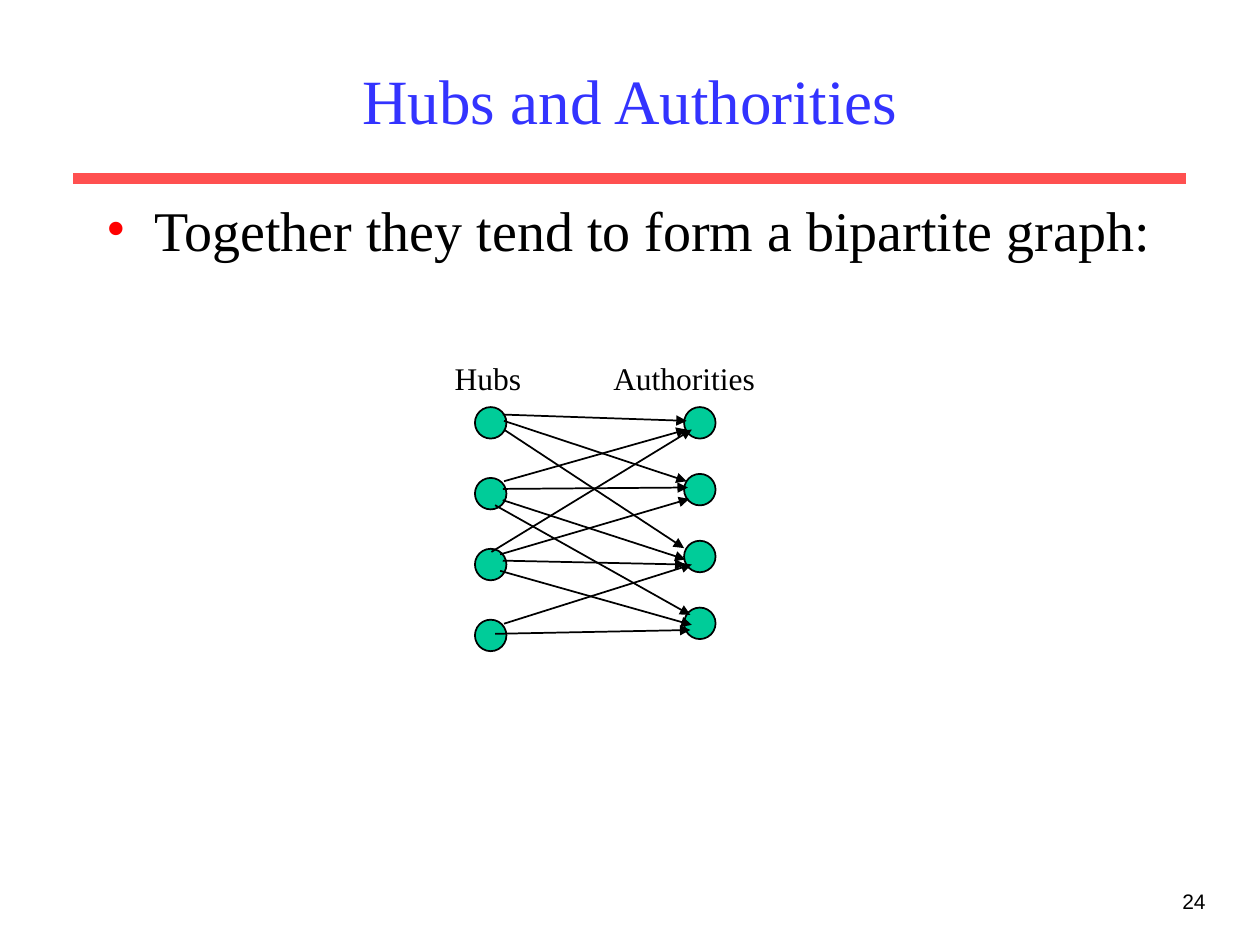
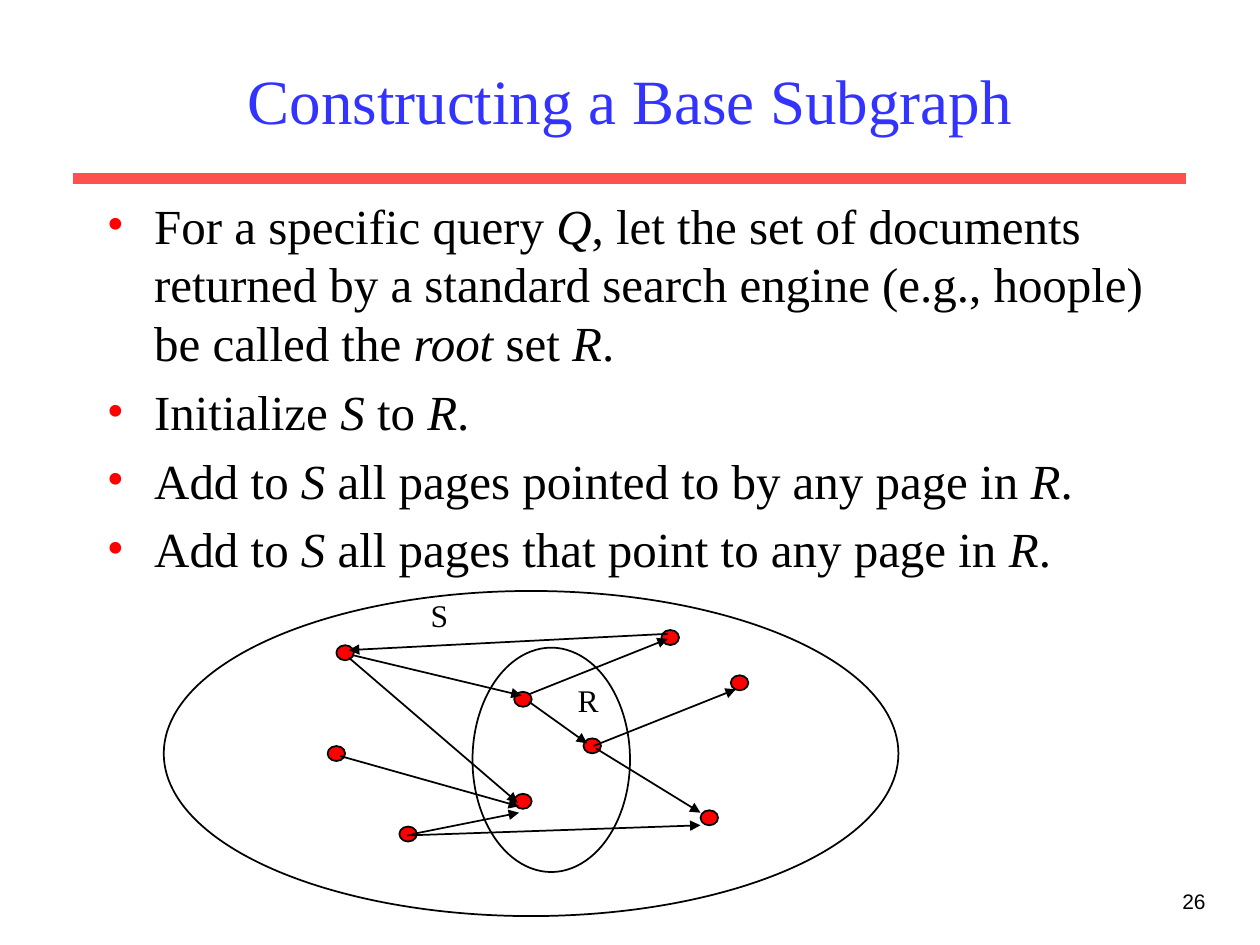
from pptx import Presentation
from pptx.dml.color import RGBColor
from pptx.enum.shapes import MSO_CONNECTOR, MSO_SHAPE
from pptx.enum.text import MSO_ANCHOR, PP_ALIGN
from pptx.oxml.ns import qn
from pptx.util import Pt
from lxml.etree import SubElement

BLACK = RGBColor(0x00, 0x00, 0x00)
TITLE_BLUE = RGBColor(0x33, 0x33, 0xFF)
RULE_RED = RGBColor(0xFF, 0x50, 0x50)
RED = RGBColor(0xFF, 0x00, 0x00)
GREEN = RGBColor(0x00, 0xCC, 0x99)
SERIF = "Times New Roman"
SANS = "Arial"

# Boxes: left, top, width, height in points
TITLE_BOX = (54, 18, 612, 78)
NUMBER_BOX = (546, 504, 150, 36)
LABEL_HEIGHT = 31


def add_run(p, text, size, color=BLACK, font=SERIF, italic=False):
    r = p.add_run()
    r.text = text
    r.font.size = Pt(size)
    r.font.name = font
    r.font.color.rgb = color
    r.font.italic = italic


def add_text(s, box, text, size, color=BLACK, font=SERIF,
             align=PP_ALIGN.LEFT, anchor=MSO_ANCHOR.TOP, wrap=True):
    tf = s.shapes.add_textbox(*map(Pt, box)).text_frame
    tf.word_wrap = wrap
    tf.vertical_anchor = anchor
    p = tf.paragraphs[0]
    p.alignment = align
    add_run(p, text, size, color, font)


def add_line(s, start, end, color=BLACK, width=1, arrow=False):
    line = s.shapes.add_connector(MSO_CONNECTOR.STRAIGHT,
                                  *map(Pt, (*start, *end)))
    line.line.color.rgb = color
    line.line.width = Pt(width)
    if arrow:
        SubElement(line.line._get_or_add_ln(), qn("a:tailEnd"), type="triangle")
    SubElement(line._element.spPr, qn("a:effectLst"))


def add_arrows(s, left, top, arrows):
    for x1, y1, x2, y2 in arrows:
        add_line(s, (left + x1, top + y1), (left + x2, top + y2), arrow=True)


def add_oval(s, box, fill=None):
    sp = s.shapes.add_shape(MSO_SHAPE.OVAL, *map(Pt, box))
    sp.shadow.inherit = False
    if fill is None:
        sp.fill.background()
    else:
        sp.fill.solid()
        sp.fill.fore_color.rgb = fill
    sp.line.color.rgb = BLACK
    sp.line.width = Pt(1)


def add_base_slide(prs, title, number):
    """Blank slide with the red rule, page number and title."""
    s = prs.slides.add_slide(prs.slide_layouts[6])
    add_line(s, (42, 102), (678, 102), RULE_RED, 6)
    add_text(s, NUMBER_BOX, str(number), 12, font=SANS, align=PP_ALIGN.RIGHT)
    add_text(s, TITLE_BOX, title, 36, TITLE_BLUE,
             align=PP_ALIGN.CENTER, anchor=MSO_ANCHOR.MIDDLE)
    return s


def add_bullets(s, box, items, size):
    """Bulleted body; words between asterisks are italic."""
    tf = s.shapes.add_textbox(*map(Pt, box)).text_frame
    tf.word_wrap = True
    for i, item in enumerate(items):
        p = tf.paragraphs[0] if i == 0 else tf.add_paragraph()
        p.space_before = Pt(0.2 * size)
        pPr = p._p.get_or_add_pPr()
        pPr.set("marL", str(Pt(27)))
        pPr.set("indent", str(Pt(-27)))
        color = SubElement(pPr, qn("a:buClr"))
        SubElement(color, qn("a:srgbClr"), val=str(RED))
        SubElement(pPr, qn("a:buFont"), typeface=SERIF)
        SubElement(pPr, qn("a:buChar"), char="•")
        for j, part in enumerate(item.split("*")):
            if part:
                add_run(p, part, size, italic=j % 2 == 1)


def add_bipartite_graph(s, box):
    """Two labelled columns of nodes, with links from hubs to authorities."""
    left, top, width, height = box
    node = 18
    # Label, label offset, label width, node offset, node pitch
    columns = [("Hubs", 0, 61.2, 18.7, 40.5),
               ("Authorities", 90.7, 103.7, 138.2, 38.2)]
    for label, label_x, label_width, node_x, pitch in columns:
        for row in range(4):
            add_oval(s, (left + node_x, top + LABEL_HEIGHT + row * pitch,
                         node, node), GREEN)
        add_text(s, (left + label_x, top, label_width, LABEL_HEIGHT),
                 label, 18, wrap=False)
    add_arrows(s, left, top, [
        # from the first hub
        (34.6, 35.3, 139.7, 38.9), (35.3, 38.9, 139.7, 73.4),
        (35.3, 43.9, 138.2, 111.6),
        # from the second hub
        (35.3, 73.4, 139.7, 43.9), (34.6, 77.8, 140.4, 77),
        (34.6, 84.2, 139, 118.1), (30.2, 87.1, 141.8, 149.8),
        # from the third hub
        (28.1, 113.8, 142.6, 43.9), (33.1, 115.2, 141.1, 83.5),
        (34.6, 118.8, 139, 121), (33.1, 124.6, 142.6, 155.5),
        # from the fourth hub
        (35.3, 154.8, 142.6, 121), (30.2, 160.6, 141.8, 158.4),
    ])


def add_base_set(s, box):
    """Base set S around root set R, with pages and their links."""
    left, top, width, height = box
    pages = [(200.2, 57.6), (239.8, 84.2), (200.2, 115.9),  # in R
             (324, 48.2), (306.7, 125.3), (98.6, 31),       # only in S
             (93.6, 88.6), (284.4, 22.3), (134.6, 134.6)]
    for x, y in pages:
        add_oval(s, (left + x, top + y, 10, 8.6), RED)
    add_oval(s, (left + 176.4, top + 32.4, 90, 128.2))
    add_oval(s, box)
    add_text(s, (left + 228.2, top + 48.2, 27.4, LABEL_HEIGHT), "R", 18,
             align=PP_ALIGN.RIGHT, wrap=False)
    add_text(s, (left + 145.4, top - 0.7, 25.2, LABEL_HEIGHT), "S", 18,
             wrap=False)
    add_arrows(s, left, top, [
        # into R
        (108, 36.7, 204.5, 59.8), (105.8, 38.2, 202.3, 121),
        (100.8, 94.3, 203, 123.1), (141.8, 139, 203, 126.7),
        # inside R and out of it
        (208.8, 63.4, 241.9, 87.1), (208.8, 59, 288, 27.4),
        (247, 90, 306.7, 126.7), (245.5, 88.6, 326.9, 56.2),
        # outside R
        (139, 139.7, 306.7, 133.9), (288, 24.5, 105.8, 33.8),
    ])


def main():
    prs = Presentation()
    prs.slide_width, prs.slide_height = Pt(720), Pt(540)

    s = add_base_slide(prs, "Hubs and Authorities", 24)
    add_bullets(s, (54, 108, 612, 369),
                ["Together they tend to form a bipartite graph:"], 32)
    add_bipartite_graph(s, (252.7, 201.6, 194.4, 176.4))

    s = add_base_slide(prs, "Constructing a Base Subgraph", 26)
    add_bullets(s, (54, 108, 636, 369), [
        "For a specific query *Q*, let the set of documents returned by a "
        "standard search engine (e.g., hoople) be called the *root* set *R*.",
        "Initialize *S *to *R*.",
        "Add to *S *all pages pointed to by any page in *R*.",
        "Add to *S* all pages that point to any page in *R*.",
    ], 28)
    add_base_set(s, (93.6, 337.7, 419.8, 185.8))

    prs.save("out.pptx")


if __name__ == "__main__":
    main()
